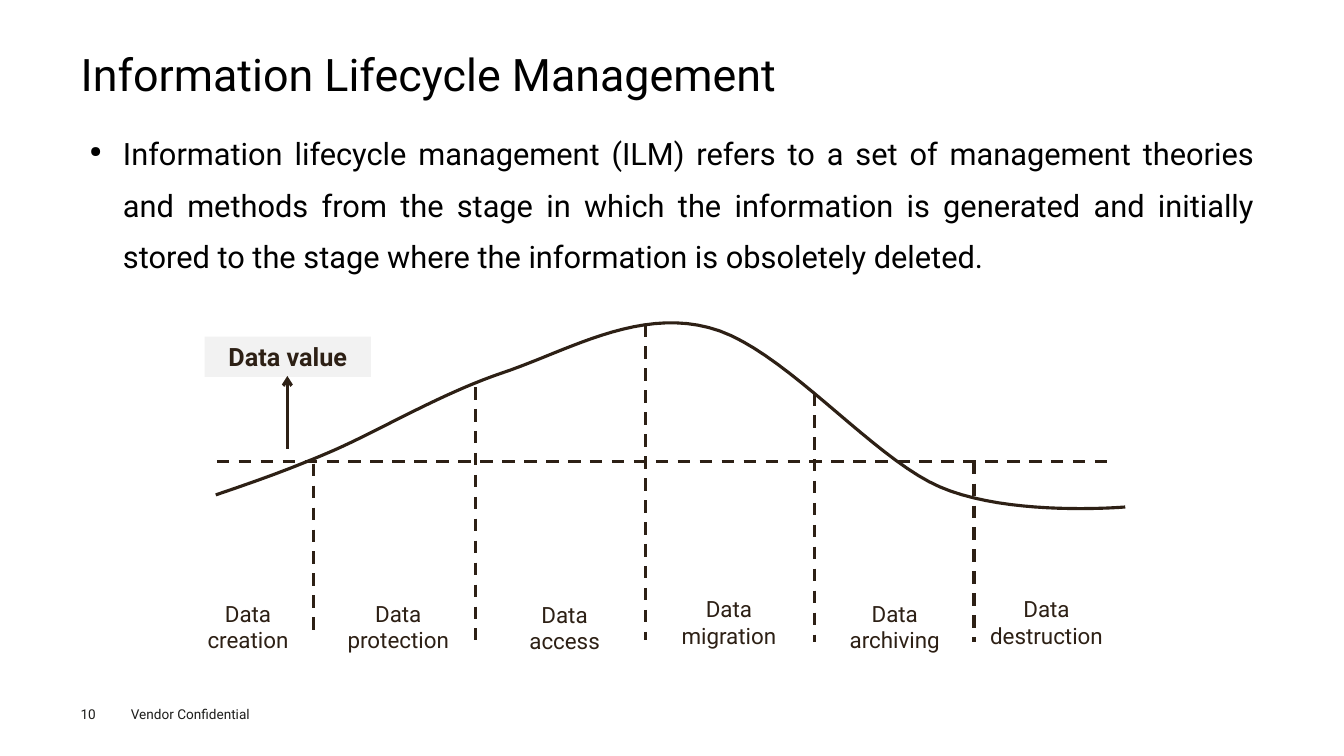
from dataclasses import dataclass

from lxml.etree import SubElement
from pptx import Presentation
from pptx.dml.color import RGBColor
from pptx.enum.dml import MSO_LINE
from pptx.enum.shapes import MSO_CONNECTOR, MSO_SHAPE
from pptx.enum.text import MSO_ANCHOR, PP_ALIGN
from pptx.oxml.ns import qn
from pptx.util import Inches, Pt


@dataclass(frozen=True)
class Theme:
    font: str = "Roboto"
    text: RGBColor = RGBColor(0x00, 0x00, 0x00)
    footer: RGBColor = RGBColor(0x1D, 0x1D, 0x1B)
    diagram: RGBColor = RGBColor(0x2D, 0x20, 0x15)
    panel: RGBColor = RGBColor(0xF2, 0xF2, 0xF2)
    title_size: float = 32
    body_size: float = 22
    value_size: float = 18
    stage_size: float = 16
    footer_size: float = 9.7
    line_width: float = 2.25


THEME = Theme()

# Stage name, then left, top and width of its label within the diagram
STAGES = [
    ("Data creation", 0, 2.84, 1.44),
    ("Data protection", 1.5, 2.84, 1.42),
    ("Data access", 3.19, 2.85, 1.34),
    ("Data migration", 4.82, 2.8, 1.34),
    ("Data archiving", 6.42, 2.84, 1.43),
    ("Data destruction", 7.97, 2.8, 1.34),
]
# Horizontal place, top and bottom of each line between two stages
DIVIDERS = [
    (1.37, 1.54, 3.24),
    (2.98, 0.78, 3.29),
    (4.66, 0.16, 3.29),
    (6.34, 0.84, 3.31),
    (7.92, 1.52, 3.31),
]
CURVE_START = (0.4, 1.85)
# Two control points and the end point of each Bezier segment
CURVE_SEGMENTS = [
    ((0.72, 1.74), (1.05, 1.63), (1.52, 1.43)),
    ((1.99, 1.23), (2.62, 0.85), (3.24, 0.64)),
    ((3.87, 0.43), (4.57, 0), (5.29, 0.19)),
    ((6.01, 0.37), (6.89, 1.47), (7.58, 1.77)),
    ((8.27, 2.07), (9.42, 1.97), (9.42, 1.97)),
]
CURVE_STEPS = 20


def write(shape, text, *, size, color, bold=False, align=PP_ALIGN.LEFT,
          anchor=MSO_ANCHOR.TOP, inset=(0.1, 0.05), spacing=1.0, bullet_indent=None):
    """Fill a shape with one formatted paragraph and return nothing."""
    frame = shape.text_frame
    frame.word_wrap = True
    frame.vertical_anchor = anchor
    frame.margin_left = frame.margin_right = Inches(inset[0])
    frame.margin_top = frame.margin_bottom = Inches(inset[1])
    paragraph = frame.paragraphs[0]
    paragraph.text = text
    paragraph.alignment = align
    paragraph.line_spacing = spacing
    if bullet_indent:
        properties = paragraph._p.get_or_add_pPr()
        properties.set("marL", str(Inches(bullet_indent)))
        properties.set("indent", str(-Inches(bullet_indent)))
        SubElement(properties, qn("a:buSzPct"), val="50000")
        SubElement(properties, qn("a:buChar"), char="●")
    font = paragraph.runs[0].font
    font.name = THEME.font
    font.size = Pt(size)
    font.bold = bold
    font.color.rgb = color


def add_text(slide, text, left, top, width, height, **text_format):
    box = slide.shapes.add_textbox(Inches(left), Inches(top), Inches(width), Inches(height))
    write(box, text, **text_format)


def add_line(slide, start, end, dashed=True, arrow=False):
    connector = slide.shapes.add_connector(
        MSO_CONNECTOR.STRAIGHT, *(Inches(value) for value in (*start, *end)))
    connector.line.color.rgb = THEME.diagram
    connector.line.width = Pt(THEME.line_width)
    if dashed:
        connector.line.dash_style = MSO_LINE.DASH
    if arrow:
        SubElement(connector.line._get_or_add_ln(), qn("a:tailEnd"), type="arrow")
    SubElement(connector._element.spPr, qn("a:effectLst"))


def curve_points():
    """Points along the Bezier segments, after the start."""
    points = []
    start = CURVE_START
    for first, second, end in CURVE_SEGMENTS:
        for step in range(1, CURVE_STEPS + 1):
            t = step / CURVE_STEPS
            weights = ((1 - t) ** 3, 3 * t * (1 - t) ** 2, 3 * t ** 2 * (1 - t), t ** 3)
            points.append(tuple(
                sum(weight * value for weight, value in zip(weights, axis))
                for axis in zip(start, first, second, end)))
        start = end
    return points


def add_title(slide, left, top, width, height):
    title = slide.shapes.title
    title.left, title.top = Inches(left), Inches(top)
    title.width, title.height = Inches(width), Inches(height)
    write(title, "Information Lifecycle Management", size=THEME.title_size,
          color=THEME.text, anchor=MSO_ANCHOR.MIDDLE, inset=(0, 0), spacing=0.9)


def add_definition(slide, left, top, width, height):
    add_text(slide, "Information lifecycle management (ILM) refers to a set of management "
             "theories and methods from the stage in which the information is generated "
             "and initially stored to the stage where the information is obsoletely deleted.",
             left, top, width, height, size=THEME.body_size, color=THEME.text,
             align=PP_ALIGN.JUSTIFY, inset=(0.09, 0.04), spacing=1.4, bullet_indent=0.33)


def add_value_diagram(slide, left, top):
    def at(x, y):
        return left + x, top + y

    add_line(slide, at(0.41, 1.52), at(9.31, 1.52))
    for x, upper, lower in DIVIDERS:
        add_line(slide, at(x, upper), at(x, lower))
    for stage, x, y, width in STAGES:
        add_text(slide, stage, *at(x, y), width, 0.4, size=THEME.stage_size,
                 color=THEME.diagram, align=PP_ALIGN.CENTER)

    value_x, value_y = at(0.29, 0.28)
    value_label = slide.shapes.add_shape(
        MSO_SHAPE.RECTANGLE, Inches(value_x), Inches(value_y), Inches(1.65), Inches(0.4))
    value_label.shadow.inherit = False
    value_label.fill.solid()
    value_label.fill.fore_color.rgb = THEME.panel
    value_label.line.fill.background()
    write(value_label, "Data value", size=THEME.value_size, color=THEME.diagram,
          bold=True, align=PP_ALIGN.CENTER, anchor=MSO_ANCHOR.MIDDLE)
    add_line(slide, at(1.11, 1.39), at(1.11, 0.67), dashed=False, arrow=True)

    builder = slide.shapes.build_freeform(*(Inches(value) for value in at(*CURVE_START)))
    builder.add_line_segments(
        [tuple(Inches(value) for value in at(*point)) for point in curve_points()],
        close=False)
    curve = builder.convert_to_shape()
    curve.shadow.inherit = False
    curve.fill.background()
    curve.line.color.rgb = THEME.diagram
    curve.line.width = Pt(THEME.line_width)


def add_footer(slide, left, top):
    footer_format = dict(size=THEME.footer_size, color=THEME.footer)
    add_text(slide, "10", left, top + 0.05, 0.4, 0.16, inset=(0, 0), **footer_format)
    add_text(slide, "Vendor Confidential", left + 0.4, top, 1.6, 0.27, **footer_format)


def main():
    presentation = Presentation()
    presentation.slide_width = Inches(13.33)
    presentation.slide_height = Inches(7.5)
    slide = presentation.slides.add_slide(presentation.slide_layouts.get_by_name("Title Only"))
    add_title(slide, 0.8, 0.49, 11.73, 0.54)
    add_definition(slide, 0.8, 1.15, 11.73, 1.6)
    add_value_diagram(slide, 1.74, 3.06)
    add_footer(slide, 0.8, 6.95)
    presentation.save("out.pptx")


if __name__ == "__main__":
    main()
